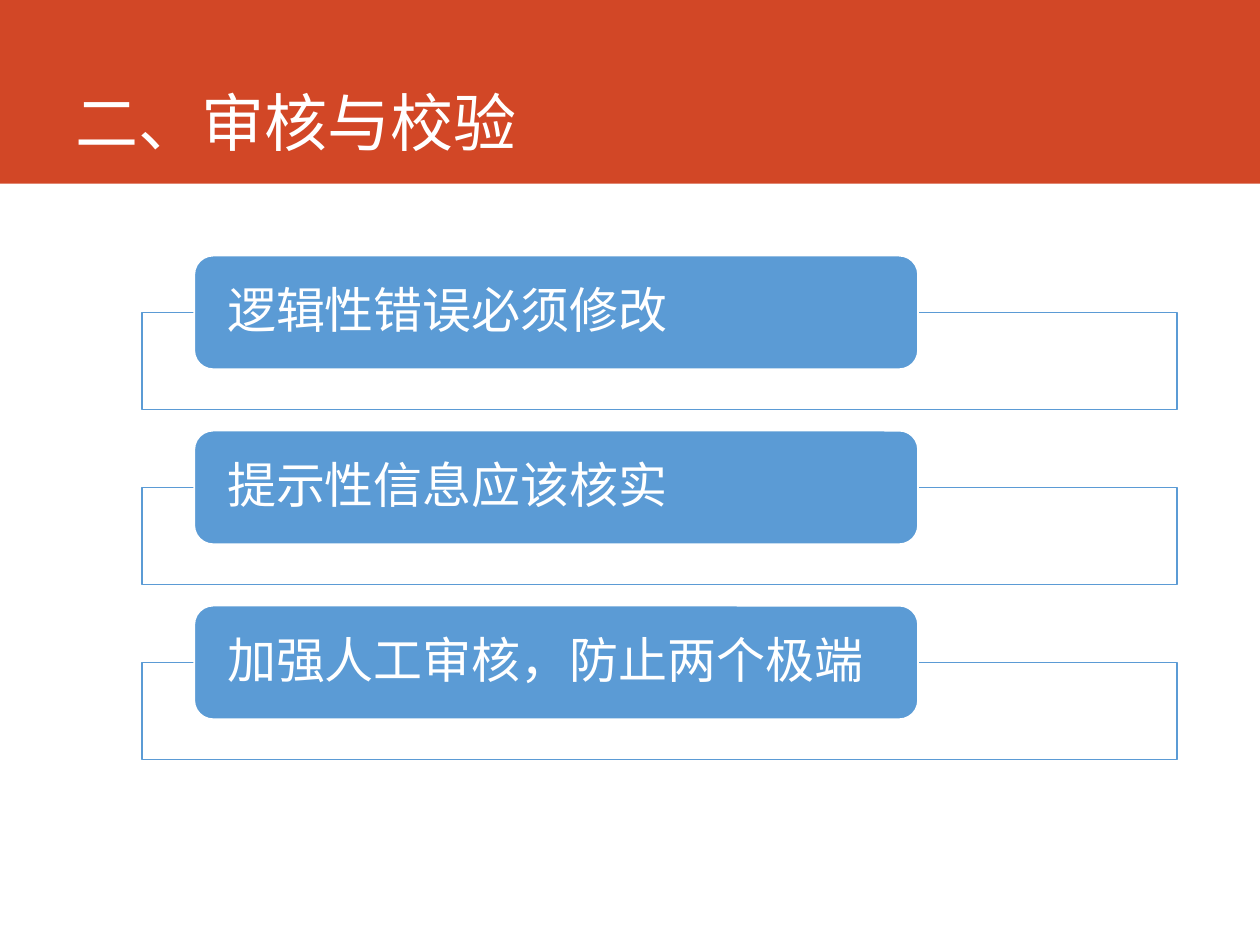
from lxml.etree import SubElement
from pptx import Presentation
from pptx.dml.color import RGBColor
from pptx.enum.shapes import MSO_SHAPE as Shape
from pptx.enum.text import MSO_ANCHOR as Anchor, PP_ALIGN as Align
from pptx.oxml.ns import qn
from pptx.util import Pt

TITLE = "二、审核与校验"
RULES = [
    "逻辑性错误必须修改",
    "提示性信息应该核实",
    "加强人工审核，防止两个极端",
]

ORANGE = RGBColor(0xD2, 0x47, 0x26)
BLUE = RGBColor(0x5B, 0x9B, 0xD5)
WHITE = RGBColor(0xFF, 0xFF, 0xFF)
CJK_FONT = "Noto Sans CJK SC"

FRAME_LEFT, FRAME_WIDTH, FRAME_HEIGHT = 81.2, 591.4, 55.44
LABEL_LEFT, LABEL_WIDTH, LABEL_HEIGHT = 111, 413.6, 64.9
FIRST_TOP, ROW_PITCH = 146.1, 100


def write_text(shape, text, size, font, anchor, insets, line_spacing):
    frame = shape.text_frame
    frame.word_wrap = True
    frame.vertical_anchor = anchor
    frame.margin_left = frame.margin_right = Pt(insets[0])
    frame.margin_top = frame.margin_bottom = Pt(insets[1])
    paragraph = frame.paragraphs[0]
    paragraph.alignment = Align.LEFT
    paragraph.line_spacing = line_spacing
    run = paragraph.add_run()
    run.text = text
    run.font.size = Pt(size)
    run.font.name = font
    run.font.color.rgb = WHITE
    SubElement(run.font._element, qn("a:ea"), typeface=CJK_FONT)


def add_box(shapes, kind, left, top, width, height, fill, line=None):
    box = shapes.add_shape(kind, Pt(left), Pt(top), Pt(width), Pt(height))
    box.shadow.inherit = False
    box.fill.solid()
    box.fill.fore_color.rgb = fill
    if line is None:
        box.line.fill.background()
    else:
        box.line.color.rgb = line
        box.line.width = Pt(1)
    return box


def set_opacity(shape, percent):
    color = shape._element.spPr.find(qn("a:solidFill"))[0]
    SubElement(color, qn("a:alpha"), val=str(percent * 1000))


def main():
    presentation = Presentation()
    presentation.slide_width, presentation.slide_height = Pt(720), Pt(540)
    slide = presentation.slides.add_slide(presentation.slide_layouts[5])

    band = add_box(slide.shapes, Shape.RECTANGLE, 0, 0, 720, 105, ORANGE)
    title = slide.shapes.title
    title._element.addprevious(band._element)
    title.left, title.top, title.width, title.height = Pt(36), Pt(0), Pt(635), Pt(95)
    write_text(title, TITLE, 36, CJK_FONT, Anchor.BOTTOM, (7.2, 3.6), 0.9)

    diagram = slide.shapes.add_group_shape().shapes
    for row, rule in enumerate(RULES):
        top = FIRST_TOP + row * ROW_PITCH
        frame = add_box(diagram, Shape.RECTANGLE, FRAME_LEFT, top + LABEL_HEIGHT / 2,
                        FRAME_WIDTH, FRAME_HEIGHT, WHITE, BLUE)
        set_opacity(frame, 90)
        label = add_box(diagram, Shape.ROUNDED_RECTANGLE, LABEL_LEFT, top,
                        LABEL_WIDTH, LABEL_HEIGHT, BLUE, WHITE)
        write_text(label, rule, 28, "Karla", Anchor.MIDDLE, (15.65, 0), 0.9)

    presentation.save("out.pptx")


if __name__ == "__main__":
    main()
